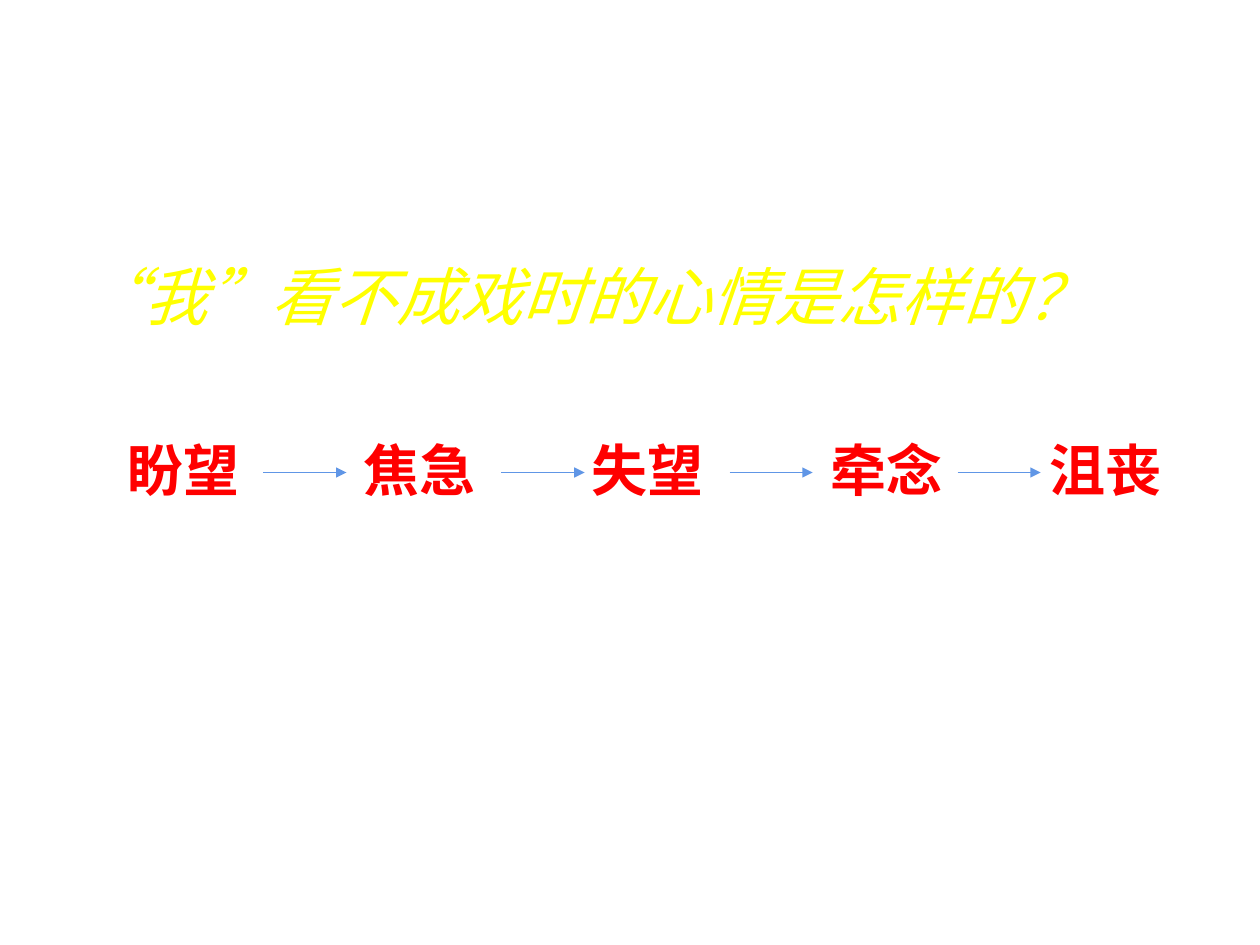
from pptx import Presentation
from pptx.dml.color import RGBColor
from pptx.enum.shapes import MSO_CONNECTOR
from pptx.enum.text import MSO_ANCHOR, MSO_AUTO_SIZE, PP_ALIGN
from pptx.oxml.ns import qn
from pptx.util import Inches, Pt
from lxml.etree import SubElement

COLORS = {"title": "FFFF00", "mood": "FF0000", "arrow": "6096E6"}
CJK_FONT = "Noto Sans CJK SC"
TITLE_FORMAT = {"name": CJK_FONT, "size": Pt(36), "italic": True}
MOOD_FORMAT = {"name": "Arial", "size": Pt(32), "bold": True}


def add_text(p, text, font_format, color):
    r = p.add_run()
    r.text = text
    for name, value in font_format.items():
        setattr(r.font, name, value)
    r.font.color.rgb = RGBColor.from_string(color)
    # East Asian typeface
    SubElement(r.font._element, qn("a:ea"), typeface=CJK_FONT)


prs = Presentation()
prs.slide_width, prs.slide_height = Inches(10), Inches(7.5)
s = prs.slides.add_slide(prs.slide_layouts[5])

# Question
title = s.shapes.title
title.left, title.top = Inches(0.55), Inches(1.97)
title.width, title.height = Inches(8.18), Inches(0.75)
tf = title.text_frame
tf.word_wrap = True
tf.vertical_anchor = MSO_ANCHOR.MIDDLE
p = tf.paragraphs[0]
p.alignment = PP_ALIGN.LEFT
add_text(p, "“我”看不成戏时的心情是怎样的？", TITLE_FORMAT, COLORS["title"])

# Moods in order: text, left, width
moods = [
    ("盼望", 0.91, 1.25),
    ("焦急", 2.79, 1.17),
    ("失望", 4.6, 1.17),
    ("牵念", 6.49, 1.33),
    ("沮丧", 8.23, 1.5),
]
for text, left, width in moods:
    sp = s.shapes.add_textbox(Inches(left), Inches(3.41), Inches(width), Inches(0.63))
    tf = sp.text_frame
    tf.word_wrap = True
    tf.auto_size = MSO_AUTO_SIZE.SHAPE_TO_FIT_TEXT
    add_text(tf.paragraphs[0], text, MOOD_FORMAT, COLORS["mood"])

# Arrows between the moods
for left in (2.09, 3.98, 5.79, 7.6):
    arrow = s.shapes.add_connector(
        MSO_CONNECTOR.STRAIGHT,
        Inches(left), Inches(3.75), Inches(left + 0.66), Inches(3.75))
    arrow.line.color.rgb = RGBColor.from_string(COLORS["arrow"])
    arrow.line.width = Pt(0.5)
    SubElement(arrow.line._get_or_add_ln(), qn("a:tailEnd"), type="triangle")
    SubElement(arrow._element.spPr, qn("a:effectLst"))

prs.save("out.pptx")
